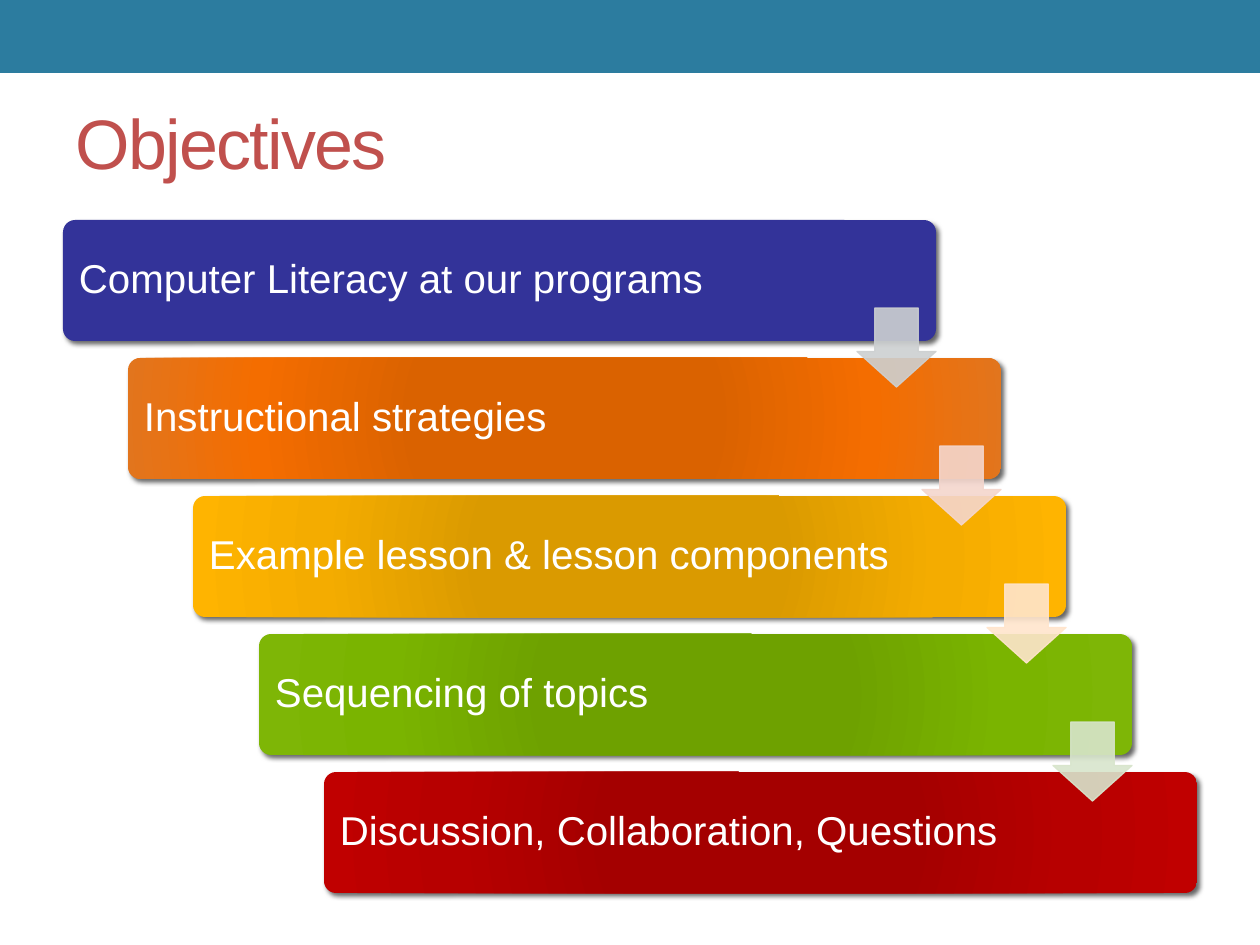
from pptx import Presentation
from pptx.dml.color import RGBColor
from pptx.enum.shapes import MSO_SHAPE
from pptx.enum.text import MSO_ANCHOR, MSO_AUTO_SIZE, PP_ALIGN
from pptx.oxml import parse_xml
from pptx.oxml.ns import nsdecls, qn
from pptx.util import Emu, Pt

PX = 914400 / 126
FONT = "Arial"

WHITE = RGBColor(0xFF, 0xFF, 0xFF)
HEADER = RGBColor(0x2C, 0x7C, 0x9F)
TITLE = RGBColor(0xC0, 0x50, 0x4D)
INDIGO = RGBColor(0x33, 0x33, 0x99)
ORANGES = RGBColor(0xDA, 0x62, 0x00), RGBColor(0xF4, 0x6D, 0x00), RGBColor(0xE2, 0x75, 0x1D)
AMBERS = RGBColor(0xDA, 0x9A, 0x00), RGBColor(0xF4, 0xAC, 0x00), RGBColor(0xFF, 0xB4, 0x00)
GREENS = RGBColor(0x6E, 0xA1, 0x00), RGBColor(0x7A, 0xB4, 0x00), RGBColor(0x7E, 0xB6, 0x06)
REDS = RGBColor(0xA4, 0x00, 0x00), RGBColor(0xB7, 0x00, 0x00), RGBColor(0xC0, 0x00, 0x00)
PALE_GREY = RGBColor(0xCD, 0xD0, 0xD1)
PALE_PINK = RGBColor(0xF4, 0xD6, 0xCD)
PALE_PEACH = RGBColor(0xFF, 0xE5, 0xCC)
PALE_GREEN = RGBColor(0xD8, 0xE5, 0xCC)

# Wording, colours from the centre outwards, colour of the arrow to the next step
STEPS = [
    ("Computer Literacy at our programs", (INDIGO,), PALE_GREY),
    ("Instructional strategies", ORANGES, PALE_PINK),
    ("Example lesson & lesson components", AMBERS, PALE_PEACH),
    ("Sequencing of topics", GREENS, PALE_GREEN),
    ("Discussion, Collaboration, Questions", REDS, None),
]
BAR_LEFT, BAR_TOP, BAR_WIDTH, BAR_HEIGHT = 63, 220, 873, 121
STEP_RIGHT, STEP_DOWN = 65.25, 138
ARROW_SIZE, ARROW_DROP = 79, 88


def px(length):
    return Emu(round(length * PX))


class StaircasePage:
    """Holds the current slide and draws its elements in one style."""

    def __init__(self, page):
        self.page = page

    def shape(self, kind, left, top, width, height, adjustments=()):
        shape = self.page.shapes.add_shape(kind, px(left), px(top), px(width), px(height))
        for index, value in enumerate(adjustments):
            shape.adjustments[index] = value
        shape.line.fill.background()
        shape.shadow.inherit = False
        return shape

    def fill(self, shape, color):
        shape.fill.solid()
        shape.fill.fore_color.rgb = color

    def radial_fill(self, shape, colors):
        center, middle, edge = colors
        stops = "".join(
            f'<a:gs pos="{position}000"><a:srgbClr val="{color}"/></a:gs>'
            for position, color in [(0, center), (34, center), (70, middle), (100, edge)])
        gradient = parse_xml(
            f'<a:gradFill {nsdecls("a")} rotWithShape="1"><a:gsLst>{stops}</a:gsLst>'
            '<a:path path="circle"><a:fillToRect l="100000" t="100000" r="100000" b="100000"/>'
            '</a:path></a:gradFill>')
        shape.element.spPr.find(qn("a:prstGeom")).addnext(gradient)

    def drop_shadow(self, shape):
        shape.element.spPr.find(qn("a:effectLst")).append(parse_xml(
            f'<a:outerShdw {nsdecls("a")} blurRad="{Pt(3)}" dist="{Pt(2)}" dir="2700000">'
            '<a:srgbClr val="000000"><a:alpha val="60000"/></a:srgbClr></a:outerShdw>'))

    def label(self, shape, text, size, color):
        frame = shape.text_frame
        frame.text = text
        frame.word_wrap = True
        frame.auto_size = MSO_AUTO_SIZE.NONE
        frame.vertical_anchor = MSO_ANCHOR.MIDDLE
        para = frame.paragraphs[0]
        para.alignment = PP_ALIGN.LEFT
        span = para.runs[0]
        span.font.name = FONT
        span.font.size = Pt(size)
        span.font.color.rgb = color
        return para

    def header(self):
        self.fill(self.shape(MSO_SHAPE.RECTANGLE, 0, 0, 1260, 73), HEADER)

    def title(self, text):
        title = self.page.shapes.title
        title.left, title.top, title.width, title.height = px(63), px(73), px(1134), px(136)
        para = self.label(title, text, 40, TITLE)
        para.runs[0].font._element.set("spc", "-100")

    def bar(self, left, top, text, colors):
        bar = self.shape(MSO_SHAPE.ROUNDED_RECTANGLE, left, top, BAR_WIDTH, BAR_HEIGHT, [0.1])
        if len(colors) == 1:
            self.fill(bar, colors[0])
        else:
            self.radial_fill(bar, colors)
        self.drop_shadow(bar)
        self.label(bar, text, 23, WHITE).line_spacing = 0.9

    def arrow(self, left, top, color):
        arrow = self.shape(MSO_SHAPE.DOWN_ARROW, left, top, ARROW_SIZE, ARROW_SIZE, [0.55, 0.45])
        self.fill(arrow, color)
        arrow.line.color.rgb = color
        arrow.line.width = Pt(0.75)
        for tint in arrow.element.spPr.iter(qn("a:srgbClr")):
            tint.append(parse_xml(f'<a:alpha {nsdecls("a")} val="90000"/>'))

    def staircase(self, steps):
        places = [(BAR_LEFT + round(index * STEP_RIGHT), BAR_TOP + index * STEP_DOWN)
                  for index in range(len(steps))]
        for (left, top), (text, colors, _) in zip(places, steps):
            self.bar(left, top, text, colors)
        for (left, top), (_, _, color) in zip(places, steps):
            if color is not None:
                self.arrow(left + BAR_WIDTH - ARROW_SIZE, top + ARROW_DROP, color)


def main():
    deck = Presentation()
    deck.slide_width, deck.slide_height = px(1260), px(945)
    slide = StaircasePage(deck.slides.add_slide(deck.slide_layouts[5]))
    slide.header()
    slide.title("Objectives")
    slide.staircase(STEPS)
    deck.save("out.pptx")


if __name__ == "__main__":
    main()
